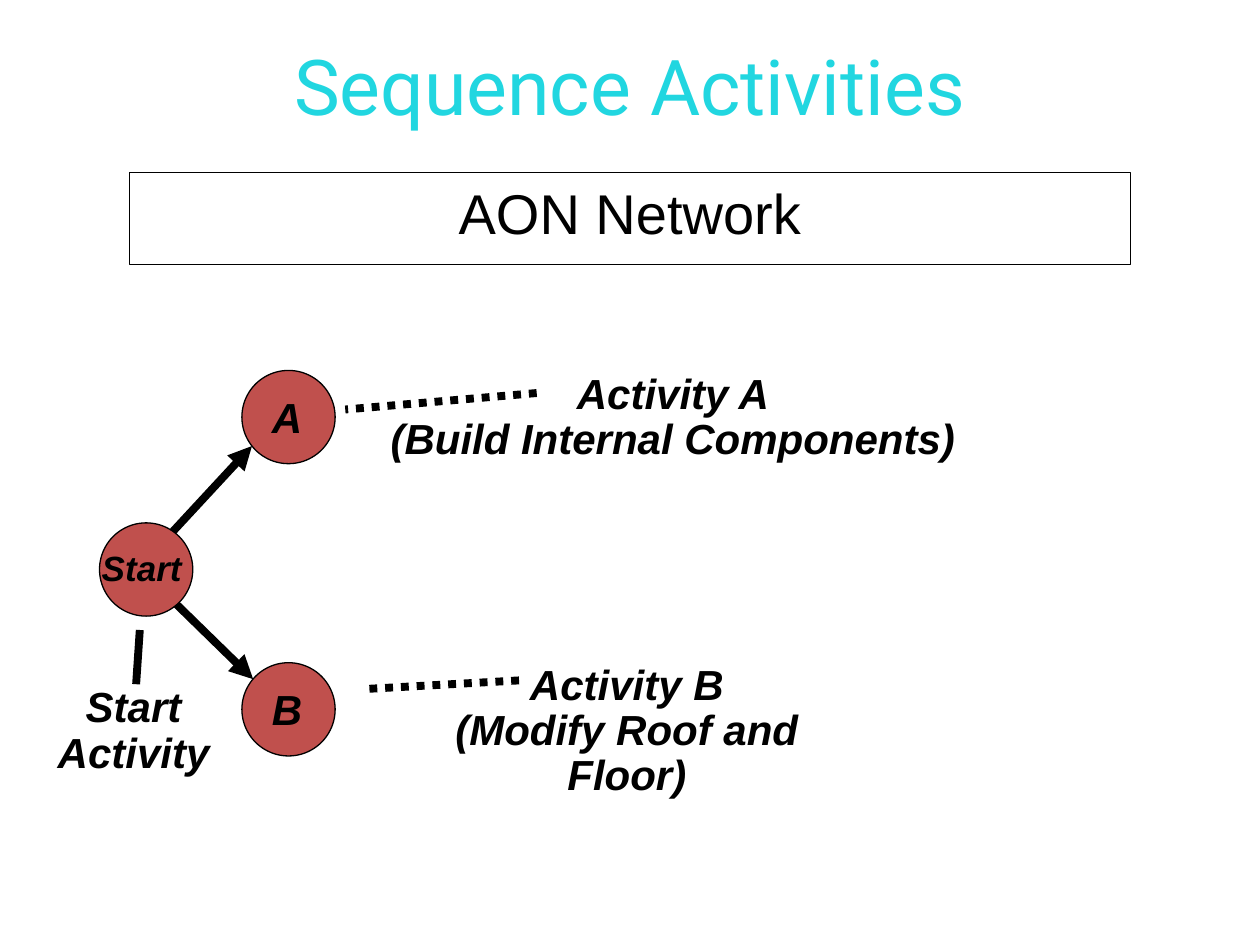
from lxml import etree
from pptx import Presentation
from pptx.dml.color import RGBColor
from pptx.enum.dml import MSO_LINE
from pptx.enum.shapes import MSO_CONNECTOR, MSO_SHAPE
from pptx.enum.text import MSO_ANCHOR, MSO_AUTO_SIZE, PP_ALIGN
from pptx.oxml.ns import qn
from pptx.util import Pt

BLACK = RGBColor(0x00, 0x00, 0x00)
RED = RGBColor(0xC0, 0x50, 0x4D)
CYAN = RGBColor(0x21, 0xD6, 0xE0)
LEFT, CENTER = PP_ALIGN.LEFT, PP_ALIGN.CENTER
TOP, MIDDLE = MSO_ANCHOR.TOP, MSO_ANCHOR.MIDDLE
NO_AUTOFIT = MSO_AUTO_SIZE.NONE
OVAL, STRAIGHT = MSO_SHAPE.OVAL, MSO_CONNECTOR.STRAIGHT
DOTTED = MSO_LINE.ROUND_DOT  # stored as sysDot

NODE_SIZE = 53.28


def write(shape, lines, size, color=BLACK, font="Arial", emphasis=True,
          align=CENTER, anchor=TOP, spacing=1.0, wrap=True):
    """Fill a shape with one paragraph per line of text."""
    frame = shape.text_frame
    frame.auto_size = NO_AUTOFIT
    frame.word_wrap = wrap
    frame.vertical_anchor = anchor
    for index, line in enumerate(lines):
        para = frame.add_paragraph() if index else frame.paragraphs[0]
        para.alignment = align
        para.line_spacing = spacing
        span = para.add_run()
        span.text = line
        span.font.name = font
        span.font.size = Pt(size)
        span.font.bold = span.font.italic = emphasis
        span.font.color.rgb = color


def add_text(page, box, lines, size, **style):
    shape = page.shapes.add_textbox(*map(Pt, box))
    write(shape, lines, size, **style)


def add_line(page, start, end, dash=None, arrow=False):
    line = page.shapes.add_connector(STRAIGHT, *map(Pt, start + end))
    line.line.color.rgb = BLACK
    line.line.width = Pt(4.5)
    if dash:
        line.line.dash_style = dash
    properties = line._element.spPr
    if arrow:
        etree.SubElement(properties.find(qn("a:ln")), qn("a:tailEnd"), type="triangle")
    etree.SubElement(properties, qn("a:effectLst"))


def add_subject(page, box):
    """Framed name of the network, held by the title placeholder."""
    title = page.shapes.title
    title.left, title.top, title.width, title.height = map(Pt, box)
    title.line.color.rgb = BLACK
    title.line.width = Pt(0.75)
    write(title, ["AON Network"], 32, emphasis=False, anchor=MIDDLE, spacing=0.8)


def add_node(page, box, label, label_box, size):
    """Round node with its label laid over it."""
    circle = page.shapes.add_shape(OVAL, *map(Pt, box))
    circle.shadow.inherit = False
    circle.fill.solid()
    circle.fill.fore_color.rgb = RED
    circle.line.color.rgb = BLACK
    circle.line.width = Pt(0.75)
    add_text(page, label_box, [label], size, align=LEFT)


def add_network(page, box):
    """Start node branching to A above and B below."""
    left, top, width, height = box
    branch_left = left + width - NODE_SIZE
    start_top = top + 87.1
    # Arrows lie behind the nodes
    add_line(page, (left + 34.6, start_top + 37.4), (left + 87.8, start_top + 89.3), arrow=True)
    add_line(page, (left + 33.8, start_top + 13.7), (left + 87.1, start_top - 43.9), arrow=True)
    add_node(page, (left, start_top, NODE_SIZE, NODE_SIZE), "Start",
             (left - 5.8, start_top + 10.1, 74.9, 31.7), 20)
    for label, node_top in (("A", top), ("B", top + height - NODE_SIZE)):
        add_node(page, (branch_left, node_top, NODE_SIZE, NODE_SIZE), label,
                 (branch_left + 10.1, node_top + 8.6, 31.7, 36), 24)


def add_callout(page, box, lines, start, end, dash=None, wrap=True):
    """Explanation of a node with its leader line."""
    add_text(page, box, lines, 24, spacing=0.9, wrap=wrap)
    add_line(page, start, end, dash)


def main():
    deck = Presentation()
    deck.slide_width, deck.slide_height = Pt(720), Pt(540)
    page = deck.slides.add_slide(deck.slide_layouts[5])

    add_subject(page, (74.16, 98.64, 571.68, 52.56))
    add_network(page, (56.88, 211.7, 134.64, 220.3))

    # Callouts
    add_callout(page, (18, 388.8, 116.6, 59), ["Start Activity"],
                (77.8, 391), (79.9, 360))
    add_callout(page, (216, 209.5, 337, 59), ["Activity A", "(Build Internal Components)"],
                (306.7, 224.6), (197.3, 234), DOTTED, wrap=False)
    add_callout(page, (216, 375.8, 284.4, 59), ["Activity B", "(Modify Roof and Floor)"],
                (296.6, 388.8), (207.4, 393.8), DOTTED)

    # Heading
    add_text(page, (36, 3.6, 648, 90), ["Sequence Activities"], 44, color=CYAN,
             font="Roboto", emphasis=False, anchor=MIDDLE)

    deck.save("out.pptx")


if __name__ == "__main__":
    main()
